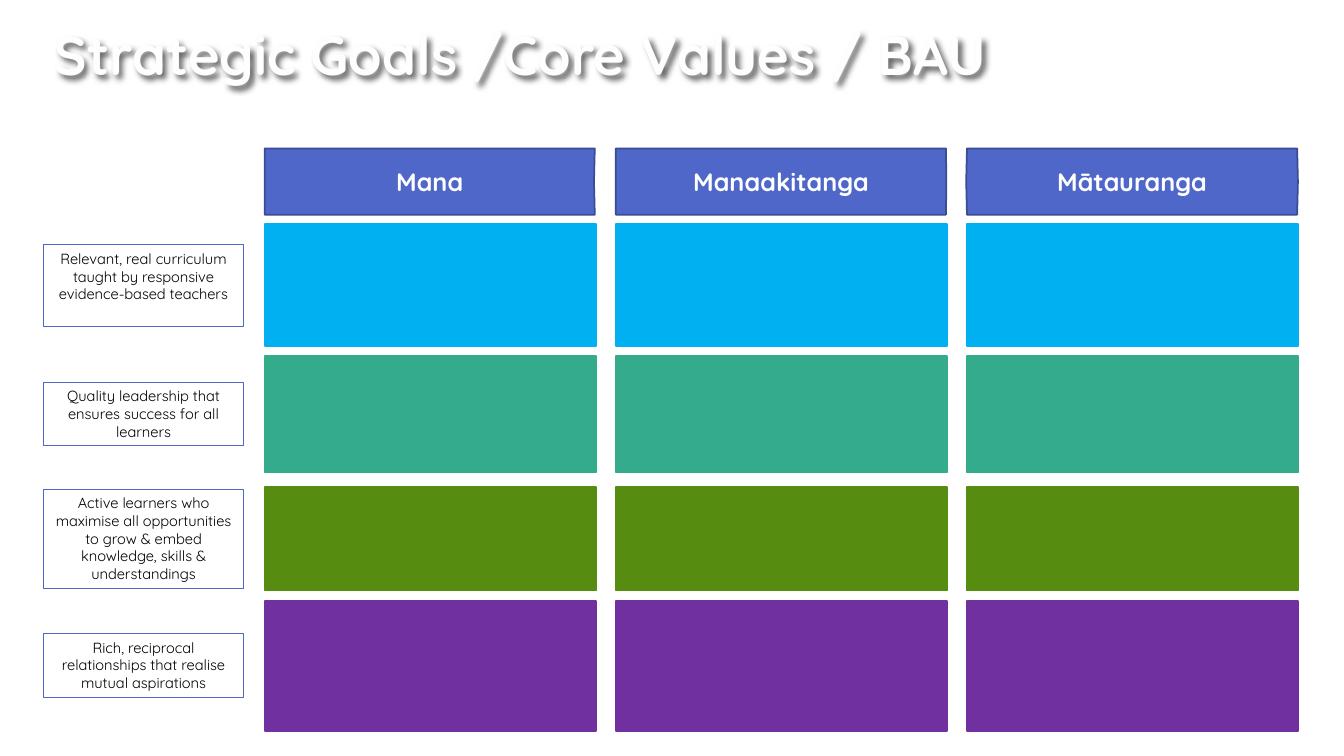
from lxml import etree
from pptx import Presentation
from pptx.dml.color import RGBColor
from pptx.enum.shapes import MSO_SHAPE
from pptx.enum.text import MSO_ANCHOR, PP_ALIGN
from pptx.oxml.ns import qn
from pptx.util import Cm, Pt

RECTANGLE = MSO_SHAPE.RECTANGLE
TOP, MIDDLE, BOTTOM = MSO_ANCHOR.TOP, MSO_ANCHOR.MIDDLE, MSO_ANCHOR.BOTTOM
LEFT, CENTER = PP_ALIGN.LEFT, PP_ALIGN.CENTER
TITLE_ONLY = 5
FONT = "Quicksand"
BLUE, DARK_BLUE = "4E67C8", "3A4C94"

LABEL_LEFT, LABEL_WIDTH = 1.09, 5.06
GRID_LEFT, COLUMN_PITCH, COLUMN_WIDTH = 6.67, 8.85, 8.35
HEADER_TOP, HEADER_HEIGHT = 3.74, 1.67

VALUES = [
    ("Mana", 0, -0.02),
    ("Manaakitanga", 0, 0.01),
    ("Mātauranga", -0.02, 0.02),
]
GOALS = [
    ("Relevant, real curriculum taught by responsive evidence-based teachers",
     "00B0F0", 5.65, 3.07, 6.17, 2.05),
    ("Quality leadership that ensures success for all learners",
     "34AC8B", 8.97, 2.94, 9.63, 1.6),
    ("Active learners who maximise all opportunities to grow & embed "
     "knowledge, skills & understandings",
     "568D11", 12.27, 2.61, 12.33, 2.49),
    ("Rich, reciprocal relationships that realise mutual aspirations",
     "7030A0", 15.15, 3.28, 15.97, 1.6),
]


def color(hex_value):
    return RGBColor.from_string(hex_value)


def style_shape(shape, fill, line, line_width):
    shape.shadow.inherit = False
    if fill:
        shape.fill.solid()
        shape.fill.fore_color.rgb = color(fill)
    else:
        shape.fill.background()
    shape.line.color.rgb = color(line)
    shape.line.width = Pt(line_width)


def write_text(shape, text, size, text_color, bold, anchor, alignment):
    frame = shape.text_frame
    frame.word_wrap = True
    frame.vertical_anchor = anchor
    paragraph = frame.paragraphs[0]
    paragraph.alignment = alignment
    run = paragraph.add_run()
    run.text = text
    run.font.name = FONT
    run.font.size = Pt(size)
    run.font.bold = bold
    run.font.color.rgb = color(text_color)


def add_text_shadow(shape):
    shape.fill.background()
    shape.line.fill.background()
    effects = etree.SubElement(shape.element.spPr, qn("a:effectLst"))
    shadow = etree.SubElement(effects, qn("a:outerShdw"), blurRad="50800",
                              dist="38100", dir="2700000", algn="tl",
                              rotWithShape="0")
    shade = etree.SubElement(shadow, qn("a:srgbClr"), val="000000")
    etree.SubElement(shade, qn("a:alpha"), val="60000")


def add_title(slide, left, top, width, height):
    title = slide.shapes.title
    title.left, title.top = Cm(left), Cm(top)
    title.width, title.height = Cm(width), Cm(height)
    write_text(title, "Strategic Goals /Core Values / BAU", 39,
               "FEFEFE", True, BOTTOM, LEFT)
    add_text_shadow(title)


def add_header(slide, left, top, width, height, text, left_bulge, right_bulge):
    right, bottom, middle = left + width, top + height, top + height / 2
    outline = [(right, top), (right + right_bulge, middle), (right, bottom),
               (left, bottom), (left + left_bulge, middle)]
    builder = slide.shapes.build_freeform(Cm(left), Cm(top))
    builder.add_line_segments([(Cm(x), Cm(y)) for x, y in outline])
    header = builder.convert_to_shape()
    style_shape(header, BLUE, DARK_BLUE, 1.25)
    write_text(header, text, 18, "FFFFFF", True, MIDDLE, CENTER)


def add_box(slide, left, top, width, height, fill, line, line_width):
    box = slide.shapes.add_shape(RECTANGLE, Cm(left), Cm(top), Cm(width), Cm(height))
    style_shape(box, fill, line, line_width)
    return box


def add_label(slide, left, top, width, height, text):
    label = add_box(slide, left, top, width, height, None, BLUE, 0.75)
    write_text(label, text, 10.5, "000000", False, TOP, CENTER)


def main():
    presentation = Presentation()
    presentation.slide_width, presentation.slide_height = Cm(33.87), Cm(19.05)
    slide = presentation.slides.add_slide(presentation.slide_layouts[TITLE_ONLY])
    add_title(slide, 1.12, 0.51, 31.62, 1.8)
    column_lefts = [GRID_LEFT + i * COLUMN_PITCH for i in range(len(VALUES))]
    for left, (value, left_bulge, right_bulge) in zip(column_lefts, VALUES):
        add_header(slide, left, HEADER_TOP, COLUMN_WIDTH - 0.03, HEADER_HEIGHT,
                   value, left_bulge, right_bulge)
    for goal, fill, top, height, label_top, label_height in GOALS:
        add_label(slide, LABEL_LEFT, label_top, LABEL_WIDTH, label_height, goal)
        for left in column_lefts:
            add_box(slide, left, top, COLUMN_WIDTH, height, fill, fill, 1.25)
    presentation.save("out.pptx")


if __name__ == "__main__":
    main()
